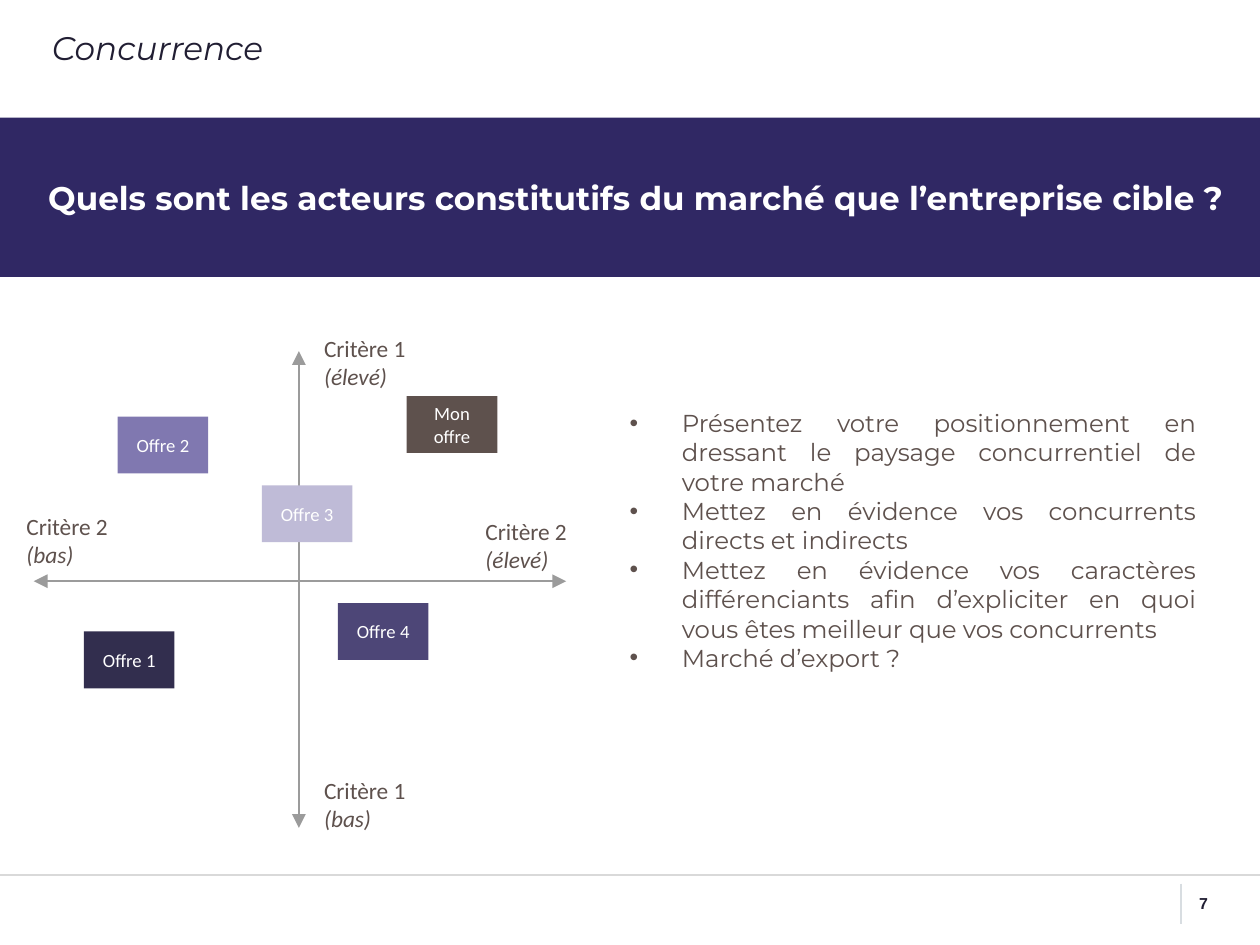
from lxml import etree
from pptx import Presentation
from pptx.dml.color import RGBColor
from pptx.enum import shapes, text
from pptx.oxml import ns
from pptx.util import Cm, Pt

NIGHT = RGBColor(0x21, 0x1E, 0x33)
INDIGO = RGBColor(0x30, 0x28, 0x64)
BROWN = RGBColor(0x5E, 0x51, 0x4D)
WHITE = RGBColor(0xFF, 0xFF, 0xFF)
AXIS_GREY = RGBColor(0x9B, 0x9B, 0x9B)
RULE_GREY = RGBColor(0xD9, 0xD9, 0xD9)
TICK_GREY = RGBColor(0xD8, 0xDD, 0xE1)

ADVICE = [
    "Présentez votre positionnement en dressant le paysage concurrentiel de votre marché",
    "Mettez en évidence vos concurrents directs et indirects",
    "Mettez en évidence vos caractères différenciants afin d’expliciter en quoi "
    "vous êtes meilleur que vos concurrents",
    "Marché d’export ?",
]
AXIS_ENDS = [
    ("Critère 1", "(élevé)", 4.65, 4.93),
    ("Critère 2", "(élevé)", 7.09, 7.7),
    ("Critère 1", "(bas)", 4.65, 11.61),
    ("Critère 2", "(bas)", 0.15, 7.62),
]
OFFERS = [
    ("Mon offre", 6.15, 5.99, BROWN),
    ("Offre 1", 1.27, 9.55, RGBColor(0x32, 0x2E, 0x4E)),
    ("Offre 3", 3.96, 7.34, RGBColor(0xBF, 0xBB, 0xD7)),
    ("Offre 4", 5.11, 9.12, RGBColor(0x4D, 0x46, 0x77)),
    ("Offre 2", 1.78, 6.3, RGBColor(0x80, 0x78, 0xB0)),
]


def add_run(paragraph, words, font, size, color, bold=False, italic=False):
    run = paragraph.add_run()
    run.text = words
    run.font.name = font
    run.font.size = Pt(size)
    run.font.color.rgb = color
    run.font.bold = bold
    run.font.italic = italic


def place(placeholder, left, top, width, height):
    """Move a placeholder and return its text frame, anchored at the top."""
    placeholder.left, placeholder.top = Cm(left), Cm(top)
    placeholder.width, placeholder.height = Cm(width), Cm(height)
    frame = placeholder.text_frame
    frame.auto_size = text.MSO_AUTO_SIZE.NONE
    frame.vertical_anchor = text.MSO_ANCHOR.TOP
    return frame


def set_margins(frame, margin):
    frame.margin_left = frame.margin_right = Cm(margin)
    frame.margin_top = frame.margin_bottom = Cm(margin)


def add_text_box(slide, left, top, width, height):
    frame = slide.shapes.add_textbox(Cm(left), Cm(top), Cm(width), Cm(height)).text_frame
    frame.word_wrap = True
    return frame


def add_rectangle(slide, left, top, width, height, color):
    rectangle = slide.shapes.add_shape(
        shapes.MSO_SHAPE.RECTANGLE, Cm(left), Cm(top), Cm(width), Cm(height))
    rectangle.shadow.inherit = False
    rectangle.fill.solid()
    rectangle.fill.fore_color.rgb = color
    rectangle.line.fill.background()
    return rectangle.text_frame


def add_line(slide, x1, y1, x2, y2, color, arrows=False):
    line = slide.shapes.add_connector(
        shapes.MSO_CONNECTOR.STRAIGHT, Cm(x1), Cm(y1), Cm(x2), Cm(y2))
    line.line.color.rgb = color
    line.line.width = Pt(0.75)
    if arrows:
        for end in ("a:headEnd", "a:tailEnd"):
            etree.SubElement(line.line._get_or_add_ln(), ns.qn(end), type="triangle")
    etree.SubElement(line._element.spPr, ns.qn("a:effectLst"))


def add_bullet(paragraph):
    properties = paragraph._p.get_or_add_pPr()
    properties.set("marL", str(Cm(0.79)))
    properties.set("indent", str(-Cm(0.79)))
    color = etree.SubElement(properties, ns.qn("a:buClr"))
    etree.SubElement(color, ns.qn("a:srgbClr"), val=str(BROWN))
    etree.SubElement(properties, ns.qn("a:buFont"), typeface="Arial")
    etree.SubElement(properties, ns.qn("a:buChar"), char="•")


def add_heading(slide):
    title = place(slide.shapes.title, 0.53, 0.3, 18.26, 0.99).paragraphs[0]
    title.alignment = text.PP_ALIGN.LEFT
    add_run(title, "Concurrence", "Montserrat", 14, NIGHT, italic=True)

    add_rectangle(slide, 0, 1.78, 19.05, 2.41, INDIGO)
    question = add_text_box(slide, 0.53, 1.8, 18.52, 2.36)
    set_margins(question, 0.2)
    question.vertical_anchor = text.MSO_ANCHOR.MIDDLE
    add_run(question.paragraphs[0],
            "Quels sont les acteurs constitutifs du marché que l’entreprise cible ?",
            "Montserrat", 14, WHITE, bold=True)


def add_advice(slide):
    frame = place(slide.placeholders[1], 9.27, 5.92, 9.07, 5.64)
    set_margins(frame, 0.25)
    for number, advice in enumerate(ADVICE):
        paragraph = frame.add_paragraph() if number else frame.paragraphs[0]
        paragraph.alignment = text.PP_ALIGN.JUSTIFY
        paragraph.space_before = Pt(0)
        add_bullet(paragraph)
        add_run(paragraph, advice, "Montserrat", 10.5, BROWN)


def add_positioning_map(slide):
    add_line(slide, 0.51, 8.79, 8.56, 8.79, AXIS_GREY, arrows=True)
    add_line(slide, 4.52, 5.31, 4.52, 12.52, AXIS_GREY, arrows=True)
    for criterion, level, left, top in AXIS_ENDS:
        label = add_text_box(slide, left, top, 2.44, 1.12)
        add_run(label.paragraphs[0], criterion, "Calibri", 10, BROWN)
        add_run(label.add_paragraph(), level, "Calibri", 10, BROWN, italic=True)
    for offer, left, top, color in OFFERS:
        frame = add_rectangle(slide, left, top, 1.37, 0.86, color)
        frame.vertical_anchor = text.MSO_ANCHOR.MIDDLE
        frame.paragraphs[0].alignment = text.PP_ALIGN.CENTER
        add_run(frame.paragraphs[0], offer, "Calibri", 8, WHITE)


def add_footer(slide):
    add_line(slide, 0, 13.23, 19.05, 13.23, RULE_GREY)
    add_line(slide, 17.86, 13.36, 17.86, 13.97, TICK_GREY)
    page = add_text_box(slide, 17.88, 13.39, 1.04, 0.53)
    add_run(page.paragraphs[0], "7", "Arial", 6.8, NIGHT, bold=True)


def main():
    deck = Presentation()
    deck.slide_width, deck.slide_height = Cm(19.05), Cm(14.29)
    slide = deck.slides.add_slide(deck.slide_layouts[1])
    add_footer(slide)
    add_heading(slide)
    add_advice(slide)
    add_positioning_map(slide)
    deck.save("out.pptx")


if __name__ == "__main__":
    main()
